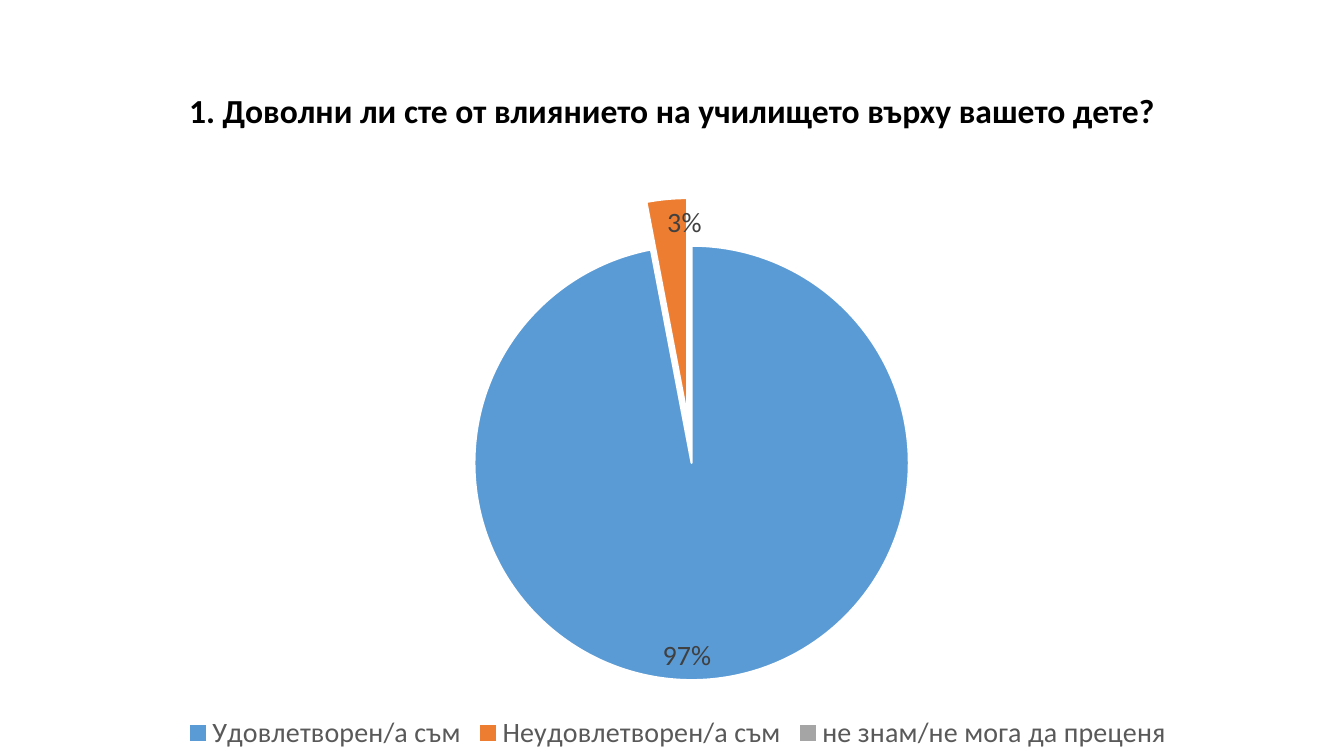
from lxml import etree
from pptx import Presentation
from pptx.chart.data import CategoryChartData
from pptx.dml.color import RGBColor
from pptx.enum.chart import XL_CHART_TYPE, XL_LABEL_POSITION, XL_LEGEND_POSITION
from pptx.enum.text import MSO_ANCHOR, PP_ALIGN
from pptx.oxml.ns import qn
from pptx.util import Cm, Pt

PIE = XL_CHART_TYPE.PIE
INSIDE_END = XL_LABEL_POSITION.INSIDE_END
BOTTOM = XL_LEGEND_POSITION.BOTTOM
MIDDLE = MSO_ANCHOR.MIDDLE
CENTER = PP_ALIGN.CENTER

FONT = "Calibri"
TITLE = "1. Доволни ли сте от влиянието на училището върху вашето дете?"
ANSWERS = [
    ("Удовлетворен/а съм", 0.97, "5B9BD5"),
    ("Неудовлетворен/а съм", 0.03, "ED7D31"),
    ("не знам/не мога да преценя", 0, "A5A5A5"),
]
PLOT_LAYOUT = {"x": 0.058, "y": 0.104, "w": 0.905, "h": 0.763}
EXPLOSION = 22


def color(value):
    return RGBColor.from_string(value)


def style_font(font, size, value, bold=False):
    font.name = FONT
    font.size = Pt(size)
    font.bold = bold
    font.color.rgb = color(value)


def add_title(slide, left, top, width, height):
    text_frame = slide.shapes.add_textbox(left, top, width, height).text_frame
    text_frame.word_wrap = True
    text_frame.vertical_anchor = MIDDLE
    text_frame.text = TITLE
    paragraph = text_frame.paragraphs[0]
    paragraph.alignment = CENTER
    paragraph.line_spacing = 0.9
    style_font(paragraph.runs[0].font, 24, "000000", bold=True)


def set_plot_layout(chart):
    plot_area = chart.plots[0]._element.getparent()
    for layout in plot_area.findall(qn("c:layout")):
        plot_area.remove(layout)
    layout = etree.Element(qn("c:layout"))
    plot_area.insert(0, layout)
    manual = etree.SubElement(layout, qn("c:manualLayout"))
    settings = {"layoutTarget": "inner", "xMode": "edge", "yMode": "edge", **PLOT_LAYOUT}
    for name, value in settings.items():
        etree.SubElement(manual, qn(f"c:{name}")).set("val", str(value))


def explode(point):
    data_point = point.format.fill._xPr.getparent()
    explosion = etree.Element(qn("c:explosion"))
    explosion.set("val", str(EXPLOSION))
    data_point.find(qn("c:spPr")).addprevious(explosion)


def hide_label(labels, index):
    label = etree.Element(qn("c:dLbl"))
    etree.SubElement(label, qn("c:idx")).set("val", str(index))
    etree.SubElement(label, qn("c:delete")).set("val", "1")
    labels._element.insert(0, label)


def add_answer_chart(slide, left, top, width, height):
    data = CategoryChartData(number_format="0%")
    data.categories = [name for name, _, _ in ANSWERS]
    data.add_series("Series 1", [share for _, share, _ in ANSWERS])
    chart = slide.shapes.add_chart(PIE, left, top, width, height, data).chart
    chart.has_title = False
    style_font(chart.font, 10, "000000")
    chart.has_legend = True
    chart.legend.position = BOTTOM
    chart.legend.include_in_layout = False
    style_font(chart.legend.font, 20, "595959")
    set_plot_layout(chart)

    plot = chart.plots[0]
    plot.vary_by_categories = True
    series = plot.series[0]
    labels = series.data_labels
    labels.show_value = True
    labels.show_percentage = False
    labels.number_format = "0%"
    labels.number_format_is_linked = False
    labels.position = INSIDE_END
    style_font(labels.font, 20, "404040")

    for index, (_, share, value) in enumerate(ANSWERS):
        point = series.points[index]
        point.format.fill.solid()
        point.format.fill.fore_color.rgb = color(value)
        point.format.line.color.rgb = color("FFFFFF")
        point.format.line.width = Pt(1.5)
        if share == 0:
            hide_label(labels, index)
        elif share < 0.5:
            explode(point)


def main():
    presentation = Presentation()
    presentation.slide_width = Cm(33.87)
    presentation.slide_height = Cm(19.05)
    slide = presentation.slides.add_slide(presentation.slide_layouts[6])
    add_title(slide, Cm(2.33), Cm(1.01), Cm(29.21), Cm(3.68))
    add_answer_chart(slide, Cm(0.3), Cm(4.7), Cm(33.56), Cm(14.35))
    presentation.save("out.pptx")


if __name__ == "__main__":
    main()
